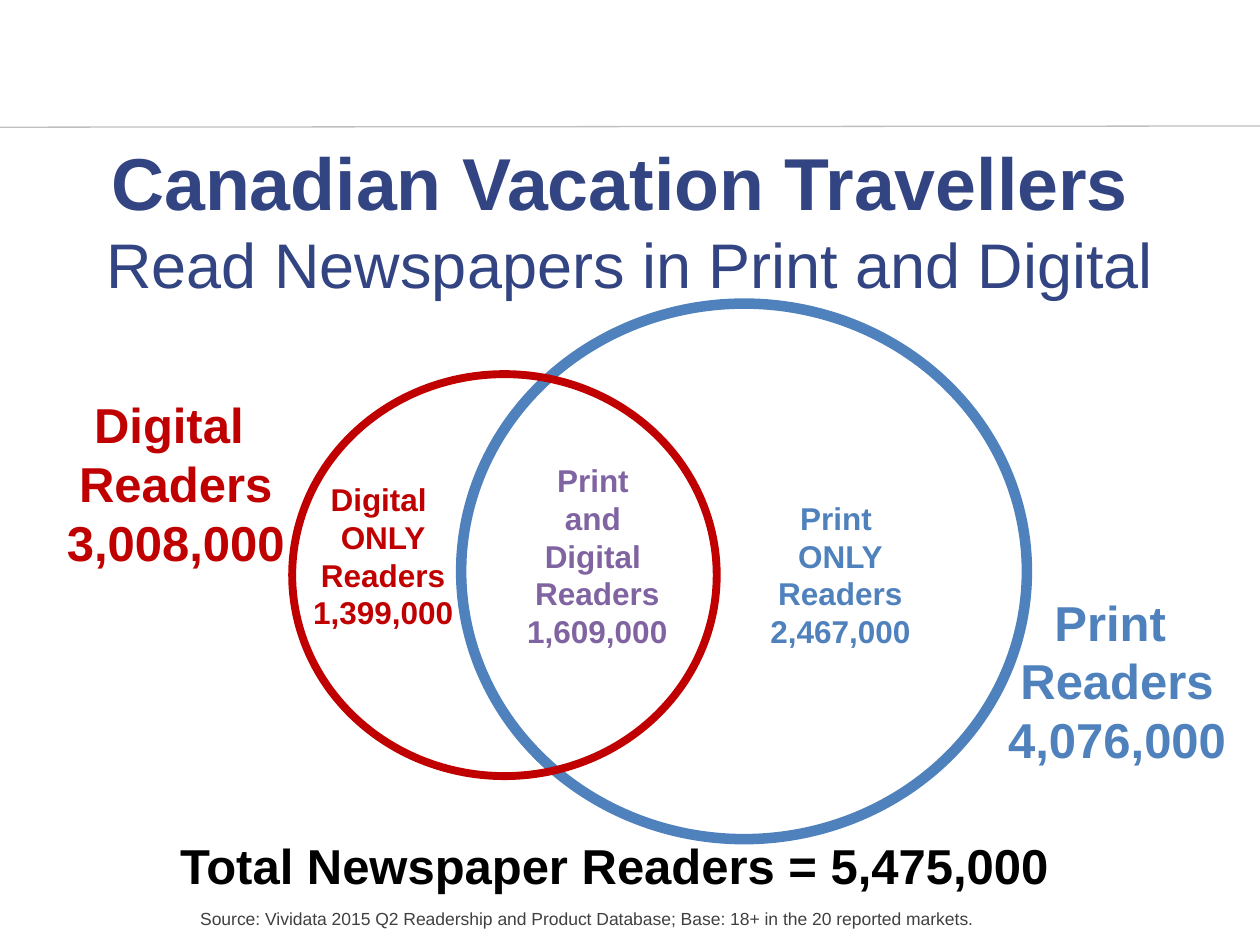
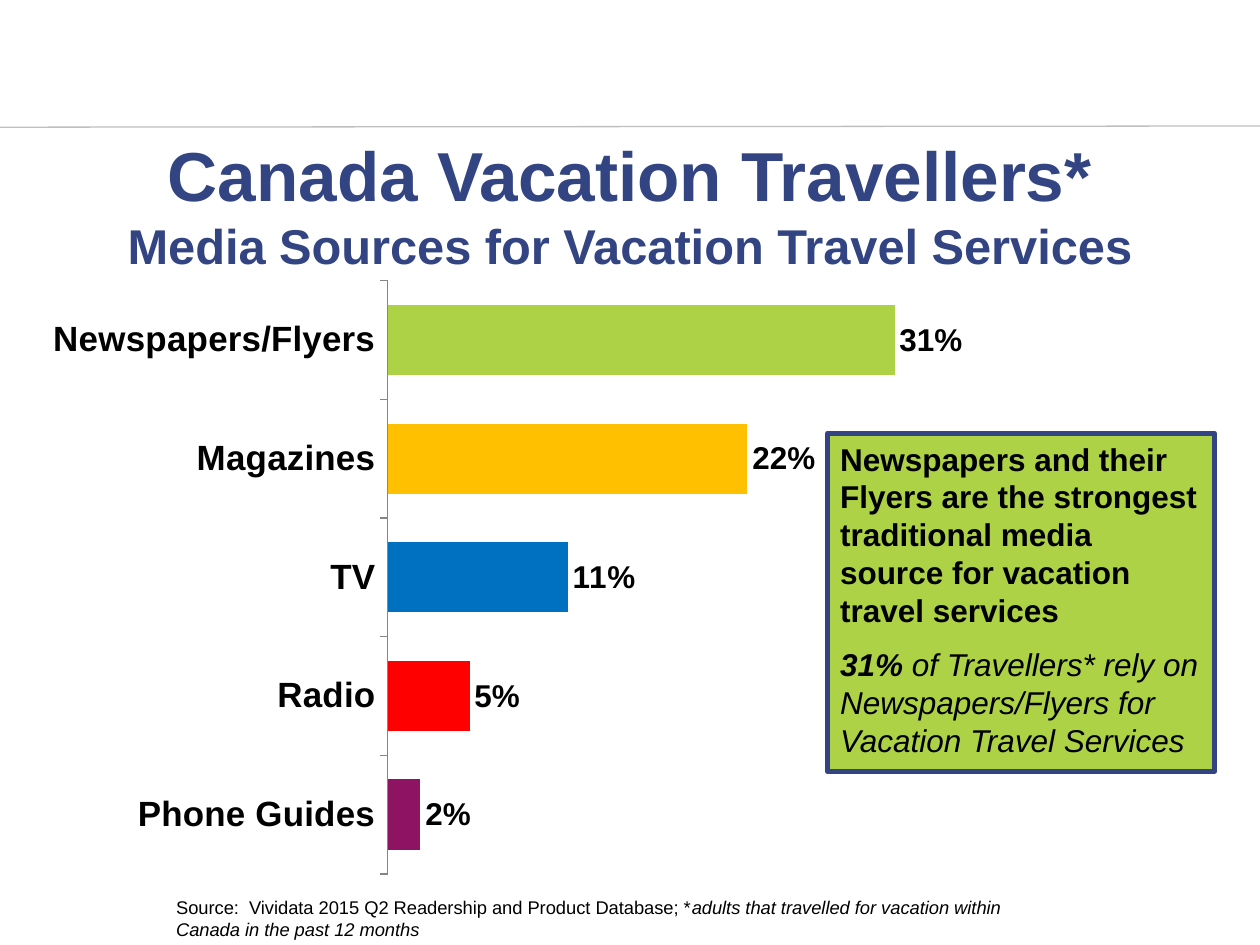
from lxml import etree
from pptx import Presentation
from pptx.chart.data import CategoryChartData
from pptx.dml.color import RGBColor
from pptx.enum.chart import XL_CHART_TYPE, XL_LABEL_POSITION, XL_TICK_LABEL_POSITION, XL_TICK_MARK
from pptx.enum.shapes import MSO_CONNECTOR, MSO_SHAPE
from pptx.enum.text import MSO_ANCHOR, MSO_AUTO_SIZE, PP_ALIGN
from pptx.oxml.ns import qn
from pptx.util import Pt

BAR_CLUSTERED = XL_CHART_TYPE.BAR_CLUSTERED
OUTSIDE_END = XL_LABEL_POSITION.OUTSIDE_END
LABELS_LOW = XL_TICK_LABEL_POSITION.LOW
TICK_OUT, TICK_NONE = XL_TICK_MARK.OUTSIDE, XL_TICK_MARK.NONE
STRAIGHT = MSO_CONNECTOR.STRAIGHT
OVAL, RECTANGLE = MSO_SHAPE.OVAL, MSO_SHAPE.RECTANGLE
TOP, MIDDLE = MSO_ANCHOR.TOP, MSO_ANCHOR.MIDDLE
FIT_SHAPE, NO_FIT = MSO_AUTO_SIZE.SHAPE_TO_FIT_TEXT, MSO_AUTO_SIZE.NONE
LEFT, CENTER = PP_ALIGN.LEFT, PP_ALIGN.CENTER

FONT = "Arial"
NAVY, BLUE, RED, PURPLE = "324481", "4F81BD", "C00000", "8064A2"
GREEN, BLACK, DARK_GRAY, RULE_GRAY, AXIS_GRAY = "AED246", "000000", "404040", "BFBFBF", "868686"

# Title lines: text, size, bold
READERS_TITLE = [("Canadian Vacation Travellers ", 42, True),
                 ("Read Newspapers in Print and Digital", 36, False)]
MEDIA_TITLE = [("Canada Vacation Travellers*", 39.6, True),
               ("Media Sources for Vacation Travel Services", 27.9, True)]

# Circles: box, colour, line width
READER_CIRCLES = [((263.5, 173.5, 323.3, 306), BLUE, 6),
                  ((167, 213.8, 242.6, 229.7), RED, 4.5)]
# Labels: lines, box, size, colour
READER_LABELS = [
    (["Print ", "Readers", "4,076,000"], (568.1, 334.8, 140.4, 108.7), 28, BLUE),
    (["Digital ", "Readers", "3,008,000"], (30.2, 221.8, 140.4, 108.7), 28, RED),
    (["Print ", "and ", "Digital ", "Readers", "1,609,000"],
     (293.8, 259.9, 95, 116.6), 18, PURPLE),
    (["Print ", "ONLY", "Readers", "2,467,000"], (432.7, 281.5, 95, 94.3), 18, BLUE),
    (["Digital ", "ONLY", "Readers", "1,399,000"], (171.4, 270.7, 95, 94.3), 18, RED),
]
TOTAL = "Total Newspaper Readers = 5,475,000"
READERS_SOURCE = ("Source: Vividata 2015 Q2 Readership and Product Database; "
                  "Base: 18+ in the 20 reported markets.")

# Bars: category, share, colour
MEDIA_SHARES = [("Newspapers/Flyers", 0.31, GREEN), ("Magazines", 0.22, "FFC000"),
                ("TV", 0.11, "0070C0"), ("Radio", 0.05, "FF0000"),
                ("Phone Guides", 0.02, "8F1363")]
PLOT_AREA = {"x": 0.404, "y": 0.016, "w": 0.596, "h": 0.957}
# Runs: text, bold, italic
FINDINGS = [
    [("Newspapers and their Flyers are the strongest traditional media source "
      "for vacation travel services", True, False)],
    [("31% ", True, True),
     ("of Travellers* rely on Newspapers/Flyers for Vacation Travel Services", False, True)],
]
MEDIA_SOURCE = [[
    ("Source:  Vividata 2015 Q2 Readership and Product Database; *", False, False),
    ("adults that travelled for vacation within Canada in the past 12 months", False, True)]]


def rgb(color):
    return RGBColor.from_string(color)


def points(box):
    return [Pt(length) for length in box]


def set_font(font, size, color, bold=None):
    font.name, font.size, font.bold = FONT, Pt(size), bold
    font.color.rgb = rgb(color)


def write(frame, paragraphs, size, color, align=LEFT):
    """Fill a text frame with paragraphs, each a list of (text, bold, italic) runs."""
    for index, runs in enumerate(paragraphs):
        paragraph = frame.paragraphs[0] if index == 0 else frame.add_paragraph()
        paragraph.alignment = align
        set_font(paragraph.font, size, color)
        for text, bold, italic in runs:
            run = paragraph.add_run()
            run.text = text
            run.font.bold, run.font.italic = bold, italic


def add_text(slide, paragraphs, box, size, color, align=LEFT, wrap=True):
    frame = slide.shapes.add_textbox(*points(box)).text_frame
    frame.word_wrap = wrap
    frame.auto_size = FIT_SHAPE
    write(frame, paragraphs, size, color, align)


def add_outlined(slide, kind, box, line_color, line_width, fill=None):
    shape = slide.shapes.add_shape(kind, *points(box))
    shape.shadow.inherit = False
    if fill:
        shape.fill.solid()
        shape.fill.fore_color.rgb = rgb(fill)
    else:
        shape.fill.background()
    shape.line.color.rgb = rgb(line_color)
    shape.line.width = Pt(line_width)
    return shape


def add_titled_slide(presentation, title_lines, box):
    slide = presentation.slides.add_slide(presentation.slide_layouts[5])
    rule = slide.shapes.add_connector(STRAIGHT, *points((0, 72.7, 720, 72)))
    rule.line.color.rgb = rgb(RULE_GRAY)
    rule.line.width = Pt(0.75)
    etree.SubElement(rule._element.spPr, qn("a:effectLst"))

    title = slide.shapes.title
    title.left, title.top, title.width, title.height = points(box)
    frame = title.text_frame
    frame.auto_size = NO_FIT
    frame.vertical_anchor = MIDDLE
    paragraph = frame.paragraphs[0]
    paragraph.alignment = CENTER
    for index, (text, size, bold) in enumerate(title_lines):
        if index:
            paragraph.add_line_break()
        run = paragraph.add_run()
        run.text = text
        set_font(run.font, size, NAVY, bold)
    return slide


def place_plot_area(chart):
    plot_area = chart._chartSpace.chart.plotArea
    for old_layout in plot_area.findall(qn("c:layout")):
        plot_area.remove(old_layout)
    layout = etree.Element(qn("c:layout"))
    manual = etree.SubElement(layout, qn("c:manualLayout"))
    settings = {"layoutTarget": "inner", "xMode": "edge", "yMode": "edge", **PLOT_AREA}
    for name, value in settings.items():
        etree.SubElement(manual, qn(f"c:{name}")).set("val", str(value))
    plot_area.insert(0, layout)


def add_media_chart(slide, box):
    data = CategoryChartData(number_format="0%")
    data.categories = [name for name, _, _ in MEDIA_SHARES]
    data.add_series("Series 1", [share for _, share, _ in MEDIA_SHARES])
    chart = slide.shapes.add_chart(BAR_CLUSTERED, *points(box), data).chart
    chart.has_title = chart.has_legend = False
    set_font(chart.font, 18, BLACK, True)
    place_plot_area(chart)

    categories = chart.category_axis
    categories.reverse_order = True
    categories.major_tick_mark, categories.minor_tick_mark = TICK_OUT, TICK_NONE
    categories.tick_label_position = LABELS_LOW
    categories.format.line.color.rgb = rgb(AXIS_GRAY)
    set_font(categories.tick_labels.font, 20, BLACK, True)
    values = chart.value_axis
    values.minimum_scale, values.maximum_scale = 0, 0.35
    values.has_major_gridlines = False
    values.visible = False

    plot = chart.plots[0]
    plot.gap_width = 69
    plot.vary_by_categories = False
    plot.has_data_labels = True
    labels = plot.data_labels
    labels.show_value = True
    labels.number_format, labels.number_format_is_linked = "0%", False
    labels.position = OUTSIDE_END
    set_font(labels.font, 18, BLACK, True)
    series = plot.series[0]
    series.format.fill.solid()
    series.format.fill.fore_color.rgb = rgb(NAVY)
    for index, (_, _, color) in enumerate(MEDIA_SHARES):
        fill = series.points[index].format.fill
        fill.solid()
        fill.fore_color.rgb = rgb(color)


def build_readers_slide(presentation):
    slide = add_titled_slide(presentation, READERS_TITLE, (0, 77, 720, 96.5))
    for box, color, width in READER_CIRCLES:
        add_outlined(slide, OVAL, box, color, width)
    for lines, box, size, color in READER_LABELS:
        paragraphs = [[(line, True, False)] for line in lines]
        add_text(slide, paragraphs, box, size, color, CENTER, wrap=False)
    add_text(slide, [[(TOTAL, True, False)]], (30.2, 473.8, 641.5, 41), 28, BLACK, CENTER)
    add_text(slide, [[(READERS_SOURCE, False, False)]],
             (107.3, 515.5, 461.5, 19.4), 10, DARK_GRAY)


def build_media_slide(presentation):
    slide = add_titled_slide(presentation, MEDIA_TITLE, (0, 71.3, 720, 90))
    add_media_chart(slide, (0, 154.8, 550, 354.2))
    callout = add_outlined(slide, RECTANGLE, (473, 247.7, 221, 193), NAVY, 3, GREEN)
    frame = callout.text_frame
    frame.word_wrap = True
    frame.vertical_anchor = TOP
    write(frame, FINDINGS, 18, BLACK)
    frame.paragraphs[1].space_before = Pt(9.6)
    add_text(slide, MEDIA_SOURCE, (93.6, 508.3, 499, 31.5), 10.5, BLACK)


def main():
    presentation = Presentation()
    presentation.slide_width, presentation.slide_height = Pt(720), Pt(540)
    build_readers_slide(presentation)
    build_media_slide(presentation)
    presentation.save("out.pptx")


if __name__ == "__main__":
    main()
